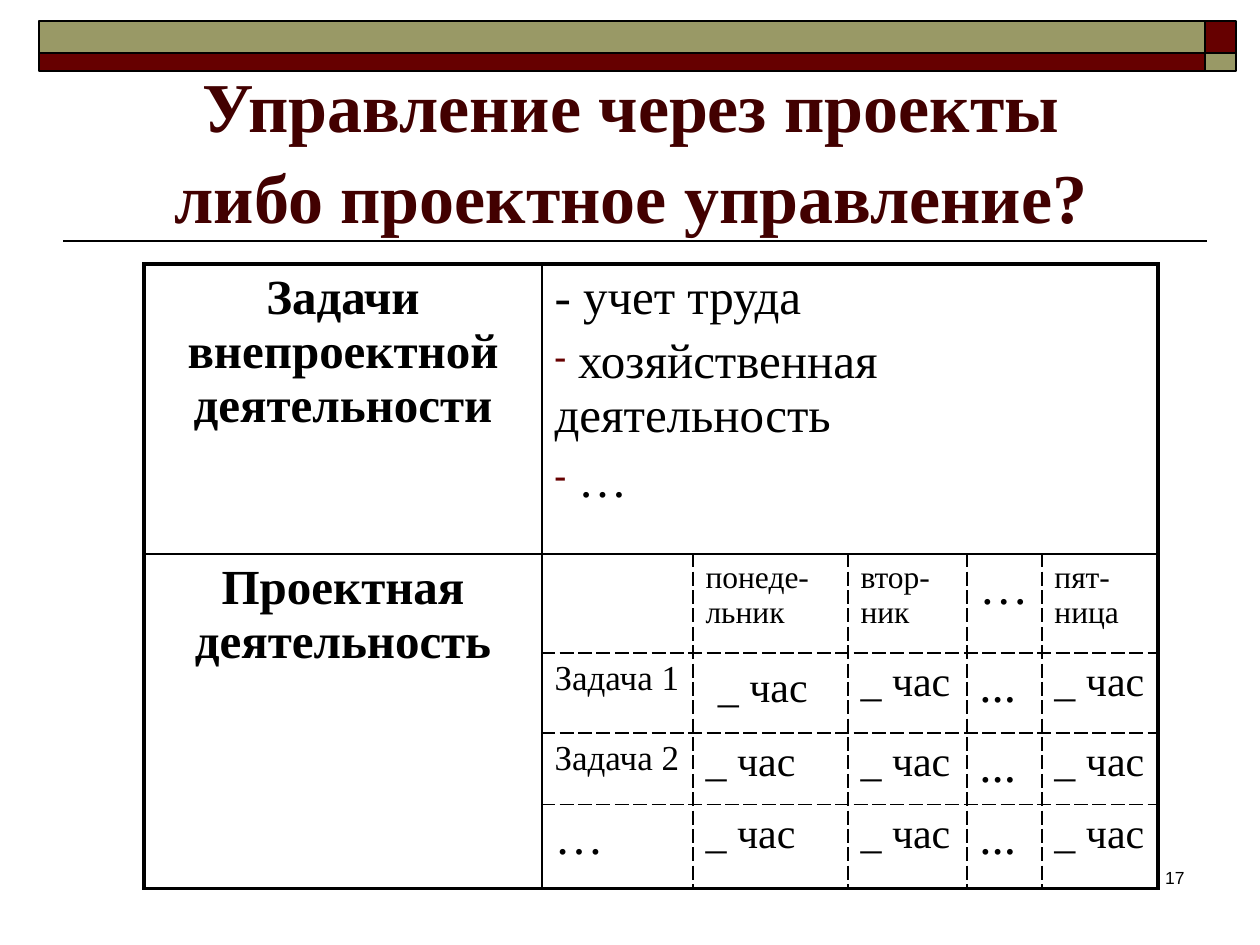
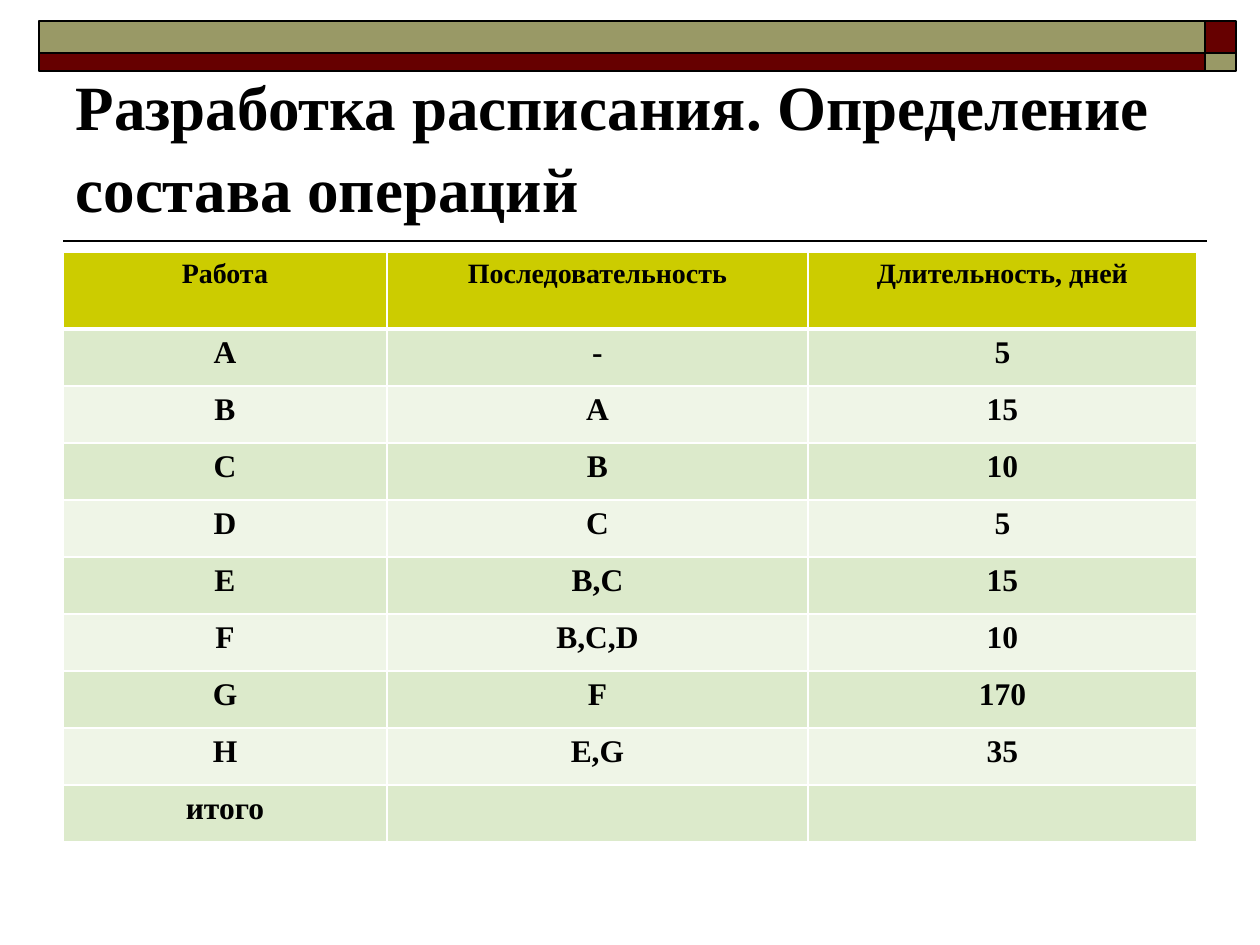
from lxml import etree
from pptx import Presentation
from pptx.dml.color import RGBColor
from pptx.enum.shapes import MSO_CONNECTOR, MSO_SHAPE
from pptx.enum.text import MSO_ANCHOR, MSO_AUTO_SIZE, PP_ALIGN
from pptx.oxml.ns import qn
from pptx.util import Pt

PX = 914400 / 126
LEFT, MID, RIGHT = PP_ALIGN.LEFT, PP_ALIGN.CENTER, PP_ALIGN.RIGHT
RECT, LINE = MSO_SHAPE.RECTANGLE, MSO_CONNECTOR.STRAIGHT
BOTTOM, FIXED = MSO_ANCHOR.BOTTOM, MSO_AUTO_SIZE.NONE
SERIF, SANS = "Times New Roman", "Arial"
HEX = {"ink": "000000", "wine": "660000", "dark": "420000", "olive": "999966",
       "head": "CCCC00", "odd": "DCEACB", "even": "EFF5E7", "white": "FFFFFF"}
RGB = {name: RGBColor.from_string(code) for name, code in HEX.items()}


def write(frame, text, size=18, color="ink", bold=False, align=LEFT,
          font=SERIF, bullet=None, before=0, space=None):
    """Append text to the last paragraph; each later line starts a new one."""
    for i, line in enumerate(text.split("\n")):
        para = frame.add_paragraph() if i else frame.paragraphs[-1]
        para.alignment = align
        if space:
            para.line_spacing = space
        if i:
            para.space_before = Pt(before)
        if i and bullet:
            props = para._p.get_or_add_pPr()
            tint = etree.SubElement(props, qn("a:buClr"))
            etree.SubElement(tint, qn("a:srgbClr"), val=HEX["wine"])
            etree.SubElement(props, qn("a:buSzPct"), val="70000")
            etree.SubElement(props, qn("a:buChar"), char=bullet)
        for k, part in enumerate(line.split("\v")):
            if k:
                para.add_line_break()
            run = para.add_run()
            run.text = part
            run.font.name, run.font.size, run.font.bold = font, Pt(size), bold
            run.font.color.rgb = RGB[color]


def edge(cell, side, width, color="ink", dash="solid"):
    """Draw one border; call in the order L, R, T, B. Zero width hides it."""
    props = cell._tc.get_or_add_tcPr()
    line = etree.SubElement(props, qn("a:ln" + side), w=str(Pt(width)))
    if not width:
        etree.SubElement(line, qn("a:noFill"))
        return
    fill = etree.SubElement(line, qn("a:solidFill"))
    etree.SubElement(fill, qn("a:srgbClr"), val=HEX[color])
    etree.SubElement(line, qn("a:prstDash"), val=dash)


deck = Presentation()
deck.slide_width, deck.slide_height = int(1260 * PX), int(945 * PX)
layout = deck.slide_layouts[5]

# Slides with their titles
titles = [
    ("Управление через проекты\vлибо проектное управление?", (64, 165, 1134, 79),
     dict(size=40, color="dark", align=MID)),
    ("Разработка расписания. Определение состава операций", (63, 73, 1134, 158),
     dict(size=36)),
]
slides = []
for text, box, look in titles:
    slide = deck.slides.add_slide(layout)
    title = slide.shapes.title
    title.left, title.top, title.width, title.height = [int(v * PX) for v in box]
    frame = title.text_frame
    frame.word_wrap, frame.auto_size = True, FIXED
    frame.vertical_anchor = BOTTOM
    write(frame, text, bold=True, space=1.08, **look)
    slides.append(slide)
plan, tasks = slides

# Bands and rule, shared through the layout
bands = [(1205, 21, 31, 32, "wine"), (39, 21, 1166, 32, "olive"),
         (39, 53, 1166, 18, "wine"), (1205, 53, 31, 18, "olive")]
rule = plan.shapes.add_connector(
    LINE, *[int(v * PX) for v in (1207, 241, 63, 241)])
etree.SubElement(rule._element.spPr, qn("a:effectLst"))
parts = [rule]
for *box, color in bands:
    band = plan.shapes.add_shape(RECT, *[int(v * PX) for v in box])
    band.shadow.inherit = False
    band.fill.solid()
    band.fill.fore_color.rgb = RGB[color]
    parts.append(band)
for i, part in enumerate(parts):
    part.line.color.rgb, part.line.width = RGB["ink"], Pt(1)
    part._element.xpath("./*/p:cNvPr")[0].set("id", str(20 + i))
    layout.shapes.element.append(part._element)

# Page number
box = plan.shapes.add_textbox(*[int(v * PX) for v in (935, 861, 262, 63)])
box.text_frame.word_wrap = True
write(box.text_frame, "17", size=10, font=SANS, align=RIGHT)

# Tables
grids = []
for slide, left, top, wide, high in [
        (plan, 144, 264, [398, 151, 155, 119, 75, 116], [290, 99, 80, 67, 84]),
        (tasks, 63, 252, [324, 421, 389], [77] + [57] * 9)]:
    spot = [int(v * PX) for v in (left, top, sum(wide), sum(high))]
    grid = slide.shapes.add_table(len(high), len(wide), *spot).table
    grid.first_row = grid.horz_banding = False
    for col, width in zip(grid.columns, wide):
        col.width = int(width * PX)
    for row, height in zip(grid.rows, high):
        row.height = int(height * PX)
    grids.append(grid)
week, work = grids

# Week plan: thick frame, thin first lines, dashed inner grid
week.cell(0, 1).merge(week.cell(0, 5))
week.cell(1, 0).merge(week.cell(4, 0))
THICK, THIN, DASH, NONE = (2.25,), (1,), (1, "ink", "sysDash"), (0,)
uprights = [THICK, THIN, DASH, DASH, DASH, DASH, THICK]
levels = [THICK, THIN, DASH, DASH, DASH, THICK]
for r in range(5):
    for c in range(6):
        cell = week.cell(r, c)
        right = c + (cell.span_width if cell.is_merge_origin else 1)
        below = r + (cell.span_height if cell.is_merge_origin else 1)
        for side, n, lines, joined in [
                ("L", c, uprights, r == 0), ("R", right, uprights, r == 0),
                ("T", r, levels, c == 0), ("B", below, levels, c == 0)]:
            style = NONE if joined and lines[n] == DASH else lines[n]
            edge(cell, side, *style)
        cell.fill.background()

for r, text in enumerate(["Задачи внепроектной деятельности",
                          "Проектная деятельность"]):
    write(week.cell(r, 0).text_frame, text, size=28, bold=True, align=MID)
write(week.cell(0, 1).text_frame, "- учет труда\n хозяйственная деятельность\n …",
      size=28, bullet="-", before=6)
for c, text, size in [(2, "понеде-льник", 18), (3, "втор-ник", 18),
                      (4, "…", 28), (5, "пят-ница", 18)]:
    write(week.cell(1, c).text_frame, text, size=size)
write(week.cell(2, 2).text_frame, " ", size=28)
for r, text, size in [(2, "Задача 1", 20), (3, "Задача 2", 20), (4, "…", 28)]:
    write(week.cell(r, 1).text_frame, text, size=size)
    for c in (2, 3, 5):
        write(week.cell(r, c).text_frame, "_ час", size=24)
    write(week.cell(r, 4).text_frame, "...", size=28)

# List of operations
rows = [
    ("Работа", "Последовательность", "Длительность, дней"),
    ("A", "-", "5"),
    ("B", "A", "15"),
    ("C", "B", "10"),
    ("D", "C", "5"),
    ("E", "B,C", "15"),
    ("F", "B,C,D", "10"),
    ("G", "F", "170"),
    ("H", "E,G", "35"),
    ("итого", "", ""),
]
for r, row in enumerate(rows):
    shade = "head" if r == 0 else "odd" if r % 2 else "even"
    for c, text in enumerate(row):
        cell = work.cell(r, c)
        for side, width in [("L", 1), ("R", 1), ("T", 3 if r == 1 else 1),
                            ("B", 3 if r == 0 else 1)]:
            edge(cell, side, width, "white")
        cell.fill.solid()
        cell.fill.fore_color.rgb = RGB[shade]
        if text:
            write(cell.text_frame, text, size=18 if r else 16, bold=True, align=MID)

deck.save("out.pptx")
